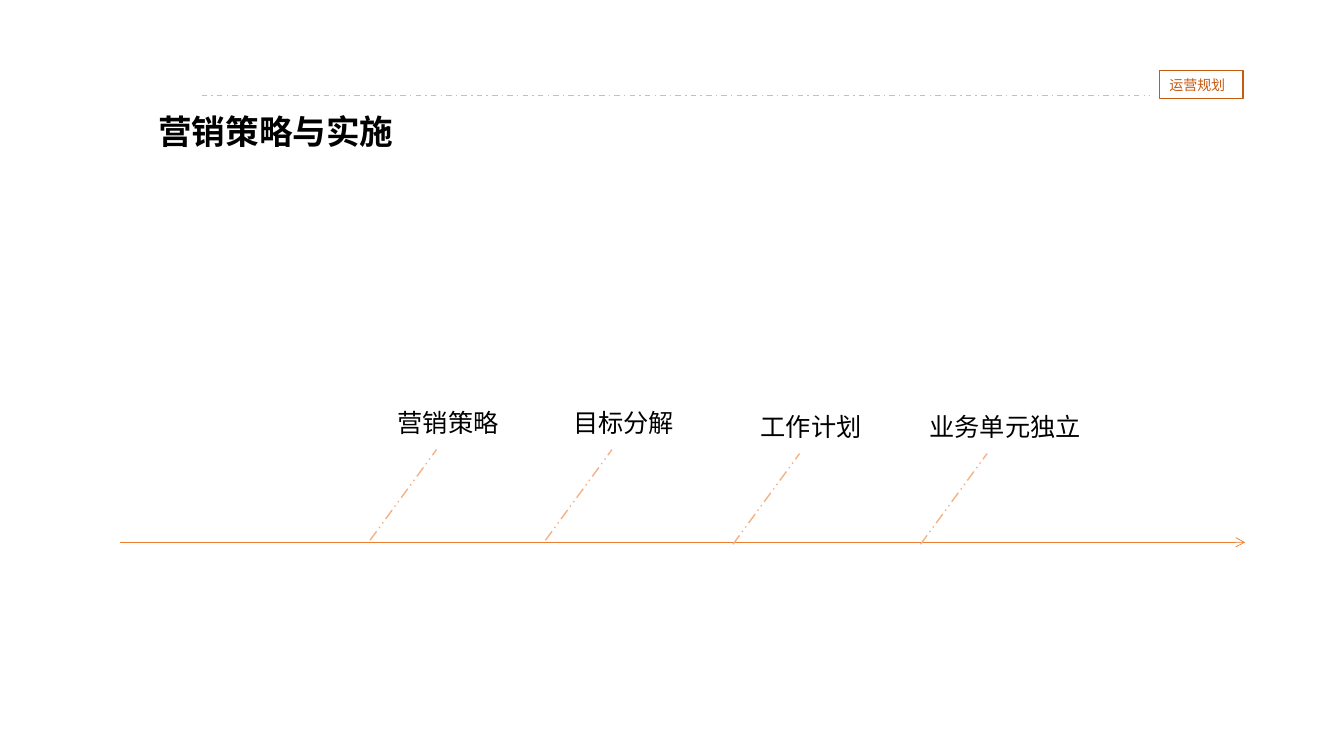
from lxml.etree import SubElement
from pptx import Presentation
from pptx.dml.color import RGBColor
from pptx.enum.dml import MSO_LINE
from pptx.enum.shapes import MSO_CONNECTOR, MSO_SHAPE
from pptx.enum.text import MSO_ANCHOR, MSO_AUTO_SIZE, PP_ALIGN
from pptx.oxml.ns import qn
from pptx.util import Inches, Pt

FONT = "Noto Sans CJK SC"


def write(sp, text, size, color, align=PP_ALIGN.LEFT, bold=False, anchor=MSO_ANCHOR.TOP):
    tf = sp.text_frame
    tf.word_wrap = True
    tf.auto_size = MSO_AUTO_SIZE.SHAPE_TO_FIT_TEXT
    tf.vertical_anchor = anchor
    p = tf.paragraphs[0]
    p.text = text
    p.alignment = align
    p.line_spacing = 1.0
    font = p.font
    font.name, font.size, font.bold = FONT, Pt(size), bold
    font.color.rgb = RGBColor.from_string(color)
    # East Asian glyphs take their typeface from a:ea
    SubElement(p.runs[0].font._element, qn("a:ea"), typeface=FONT)


def add_line(x1, y1, x2, y2, color, width=1, dash=None):
    line = slide.shapes.add_connector(
        MSO_CONNECTOR.STRAIGHT, Inches(x1), Inches(y1), Inches(x2), Inches(y2))
    line.line.color.rgb = RGBColor.from_string(color)
    line.line.width = Pt(width)
    if dash:
        line.line.dash_style = dash
    SubElement(line._element.spPr, qn("a:effectLst"))
    return line


prs = Presentation()
prs.slide_width, prs.slide_height = Inches(13.33), Inches(7.5)
slide = prs.slides.add_slide(prs.slide_layouts[5])

# Title and header
title = slide.shapes.title
title.left, title.top = Inches(1.47), Inches(1.05)
title.width, title.height = Inches(3.57), Inches(0.53)
write(title, "营销策略与实施", 24, "000000", bold=True)

add_line(2, 0.95, 11.4, 0.95, "F4B183", dash=MSO_LINE.DASH_DOT)

tag = slide.shapes.add_shape(
    MSO_SHAPE.RECTANGLE, Inches(11.5), Inches(0.7), Inches(0.83), Inches(0.28))
tag.shadow.inherit = False
tag.fill.background()
tag.line.color.rgb = RGBColor.from_string("C55A11")
tag.line.width = Pt(1)
write(tag, "运营规划", 10, "C55A11", anchor=MSO_ANCHOR.MIDDLE)

# Timeline
axis = add_line(1.19, 5.38, 12.35, 5.38, "ED7D31", 0.5)
SubElement(axis._element.spPr.find(qn("a:ln")), qn("a:tailEnd"), type="arrow")

steps = [
    ("营销策略", 3.61, 3.99, 1.67),
    ("目标分解", 5.35, 3.99, 1.67),
    ("工作计划", 7.21, 4.03, 1.67),
    ("业务单元独立", 9.07, 4.03, 1.8),
]
for text, x, y, width in steps:
    add_line(x + 0.06, y + 1.37, x + 0.72, y + 0.47, "F4B183",
             dash=MSO_LINE.DASH_DOT_DOT)
    label = slide.shapes.add_textbox(Inches(x), Inches(y), Inches(width), Inches(0.42))
    write(label, text, 18, "000000", PP_ALIGN.CENTER)

prs.save("out.pptx")
